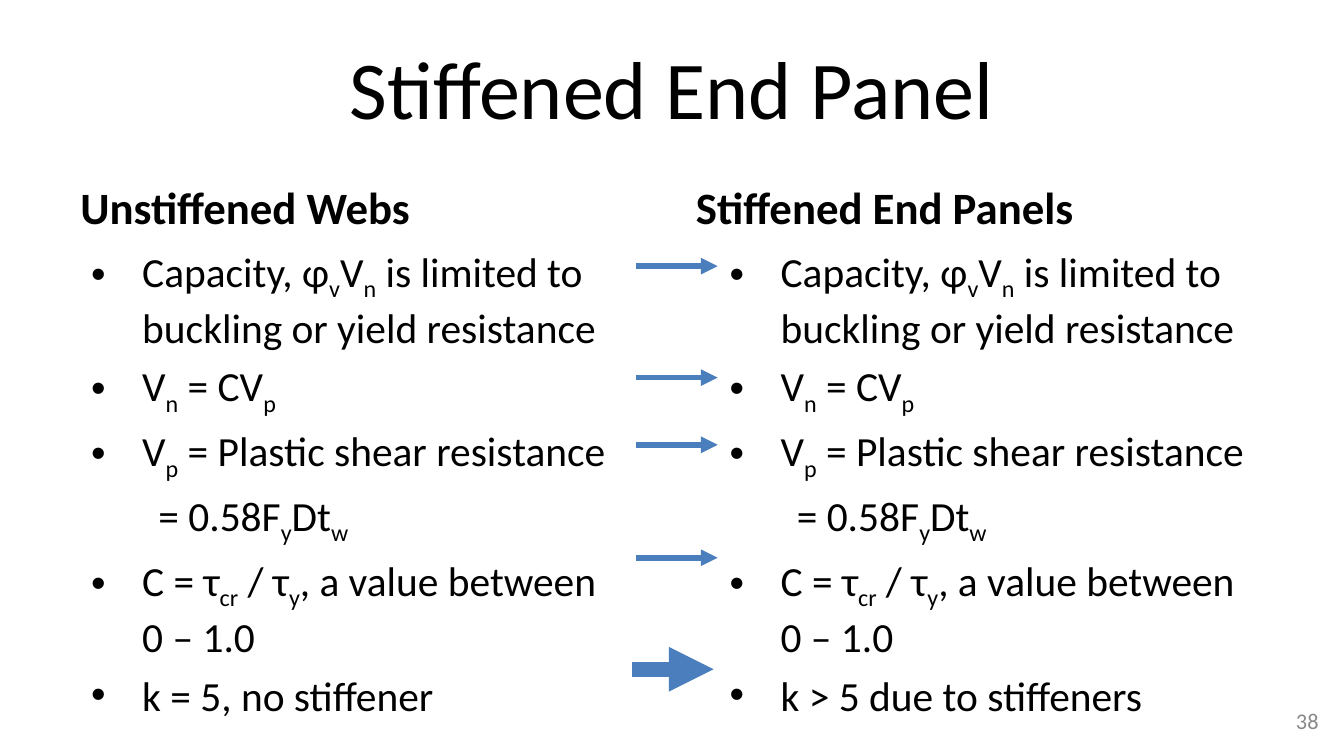
from pptx import Presentation, util as u
from pptx.dml.color import RGBColor
from pptx.enum import shapes, text
from pptx.oxml.ns import qn
from lxml import etree

W = 10
H = W * 9 / 16
BLACK = RGBColor(0, 0, 0)
GRAY = RGBColor(0x89, 0x89, 0x89)
BLUE = RGBColor(0x4B, 0x7E, 0xBC)
FONT = "Calibri"
MID, LOW, TOP = text.MSO_ANCHOR.MIDDLE, text.MSO_ANCHOR.BOTTOM, text.MSO_ANCHOR.TOP
LEFT, MAIN, RIGHT = text.PP_ALIGN.LEFT, text.PP_ALIGN.CENTER, text.PP_ALIGN.RIGHT

# Subscripts stand between tildes; a leading tab marks a line without bullet
SHARED = [
    "Capacity, φ~v~V~n~ is limited to buckling or yield resistance",
    "V~n~ = CV~p~",
    "V~p~ = Plastic shear resistance",
    "\t= 0.58F~y~Dt~w~",
    "C = τ~cr~ / τ~y~, a value between 0 – 1.0",
]
# Heading, heading left, list left, last point
COLS = [
    ("Unstiffened Webs", 0.5, 0.58, "k = 5, no stiffener"),
    ("Stiffened End Panels", 5.08, 5.33, "k > 5 due to stiffeners"),
]
# Left, height on the slide, line width
ARROWS = [(4.73, 1.98, 3), (4.73, 2.81, 3), (4.73, 3.31, 3),
          (4.73, 4.15, 3), (4.7, 4.98, 8)]


def add_mark(para):
    props = para._p.get_or_add_pPr()
    props.set("marL", str(u.Inches(0.38)))
    props.set("indent", str(-u.Inches(0.38)))
    etree.SubElement(props, qn("a:buFont")).set("typeface", "Arial")
    etree.SubElement(props, qn("a:buChar")).set("char", "•")


def add_tab(para):
    props = para._p.get_or_add_pPr()
    props.set("marL", "0")
    props.set("indent", "0")
    etree.SubElement(props, qn("a:buNone"))
    stops = etree.SubElement(props, qn("a:tabLst"))
    stop = etree.SubElement(stops, qn("a:tab"))
    stop.set("pos", str(u.Inches(1)))
    stop.set("algn", "l")


def add_text(slide, lines, box, size, color=BLACK, bold=False,
             align=LEFT, anchor=TOP, marks=False):
    frame = slide.shapes.add_textbox(*map(u.Inches, box)).text_frame
    frame.word_wrap = True
    frame.vertical_anchor = anchor
    for i, line in enumerate(lines):
        para = frame.paragraphs[0] if i == 0 else frame.add_paragraph()
        para.alignment = align
        if line.startswith("\t"):
            add_tab(para)
        elif marks:
            add_mark(para)
        if i:
            para.space_before = u.Pt(0.2 * size)
        for j, part in enumerate(line.split("~")):
            if not part:
                continue
            run = para.add_run()
            run.text = part
            font = run.font
            font.name, font.size, font.bold = FONT, u.Pt(size), bold
            font.color.rgb = color
            if j % 2:
                run._r.get_or_add_rPr().set("baseline", "-25000")


def add_arrow(slide, left, top, width):
    ends = map(u.Inches, (left, top, left + 0.61, top))
    line = slide.shapes.add_connector(shapes.MSO_CONNECTOR.STRAIGHT, *ends)
    line.line.color.rgb = BLUE
    line.line.width = u.Pt(width)
    etree.SubElement(line.line._get_or_add_ln(), qn("a:tailEnd")).set("type", "triangle")
    etree.SubElement(line._element.spPr, qn("a:effectLst"))


def main():
    deck = Presentation()
    deck.slide_width, deck.slide_height = u.Inches(W), u.Inches(H)
    slide = deck.slides.add_slide(deck.slide_layouts[6])

    # Title and page number
    add_text(slide, ["Stiffened End Panel"], (0.05 * W, 0.23, 0.9 * W, 0.94), 44,
             align=MAIN)
    add_text(slide, ["38"], (7.58, 5.21, 2.33, 0.3), 12, color=GRAY,
             align=RIGHT, anchor=MID)

    # Two columns
    for head, left, inner, last in COLS:
        add_text(slide, [head], (left, 1.26, 4.42, 0.53), 24, bold=True, anchor=LOW)
        add_text(slide, SHARED + [last], (inner, 1.78, 4.09, 3.73), 22.2, marks=True)

    # Arrows from left to right column
    for arrow in ARROWS:
        add_arrow(slide, *arrow)

    deck.save("out.pptx")


if __name__ == "__main__":
    main()
